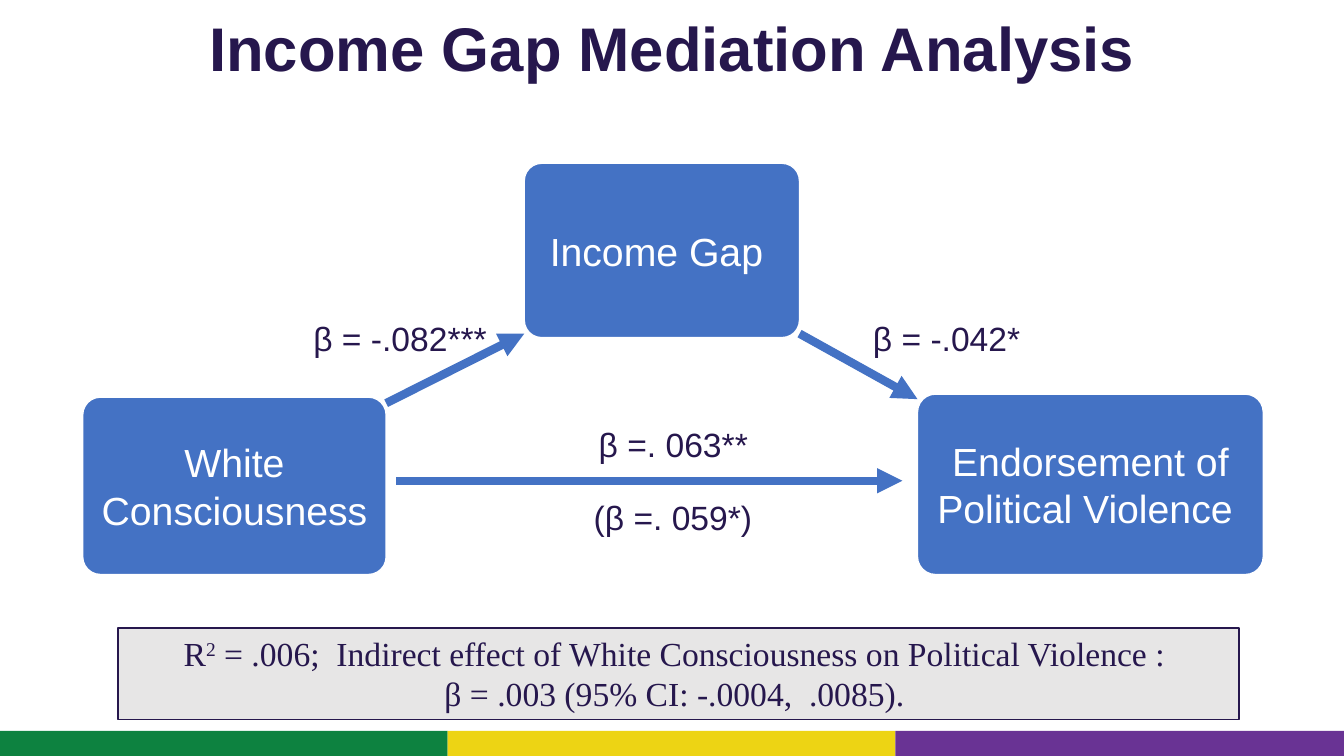
import pptx
import pptx.util
import pptx.dml.color
import pptx.enum.shapes
import pptx.enum.text
import pptx.oxml.ns
from lxml import etree

PX = 9144  # EMU per px, 100 px to the inch
W, H = 1333, 750
COLORS = {
    "ink": "26174D", "blue": "4472C4", "white": "FFFFFF", "grey": "E7E6E6",
    "green": "0D8240", "yellow": "EDD414", "purple": "693394",
}
SHAPE = pptx.enum.shapes.MSO_SHAPE
ALIGN = pptx.enum.text.PP_ALIGN
ANCHOR = pptx.enum.text.MSO_ANCHOR
FIT = pptx.enum.text.MSO_AUTO_SIZE
qn = pptx.oxml.ns.qn


def rgb(name):
    return pptx.dml.color.RGBColor.from_string(COLORS[name])


class Deck:
    """Slide style and the current slide."""

    fonts = {
        "title": {"name": "Arial", "size": 44, "bold": True, "color": "ink"},
        "box": {"name": "Arial", "size": 28, "color": "white"},
        "label": {"name": "Arial", "size": 24, "color": "ink"},
        "note": {"name": "Times New Roman", "size": 24, "color": "ink"},
    }

    def __init__(self):
        self.prs = pptx.Presentation()
        self.prs.slide_width, self.prs.slide_height = W * PX, H * PX
        self.s = self.prs.slides.add_slide(self.prs.slide_layouts[5])

    def emu(self, *px):
        return [pptx.util.Emu(v * PX) for v in px]

    def font(self, r, style):
        for key, value in self.fonts[style].items():
            if key == "color":
                r.font.color.rgb = rgb(value)
            else:
                setattr(r.font, key, pptx.util.Pt(value) if key == "size" else value)

    def text(self, tf, lines, style, align=ALIGN.CENTER, **frame):
        """Each line is a list of runs; a run starting with ^ is raised."""
        for key, value in {"word_wrap": True, **frame}.items():
            setattr(tf, key, value)
        for i, line in enumerate(lines):
            p = tf.add_paragraph() if i else tf.paragraphs[0]
            p.alignment = align
            for words in line:
                r = p.add_run()
                r.text = words.lstrip("^")
                self.font(r, style)
                if words.startswith("^"):
                    r._r.get_or_add_rPr().set("baseline", "30000")
        return tf

    def title(self, words, at):
        sp = self.s.shapes.title
        sp.left, sp.top, sp.width, sp.height = self.emu(*at)
        tf = self.text(sp.text_frame, [[words]], "title",
                       vertical_anchor=ANCHOR.MIDDLE, auto_size=FIT.NONE)
        tf.paragraphs[0].line_spacing = 0.9

    def shape(self, kind, at, fill, line=None):
        sp = self.s.shapes.add_shape(kind, *self.emu(*at))
        sp.shadow.inherit = False
        sp.fill.solid()
        sp.fill.fore_color.rgb = rgb(fill)
        if line:
            sp.line.color.rgb = rgb(line)
            sp.line.width = pptx.util.Pt(1)
        else:
            sp.line.fill.background()
        return sp

    def box(self, words, at):
        sp = self.shape(SHAPE.ROUNDED_RECTANGLE, at, "blue", "white")
        sp.adjustments[0] = 0.1
        pad = self.emu(12)[0]
        self.text(sp.text_frame, [[words]], "box", vertical_anchor=ANCHOR.MIDDLE,
                  margin_left=pad, margin_right=pad, margin_top=pad, margin_bottom=pad)

    def label(self, words, at):
        sp = self.s.shapes.add_textbox(*self.emu(*at))
        self.text(sp.text_frame, [[words]], "label", ALIGN.LEFT,
                  auto_size=FIT.SHAPE_TO_FIT_TEXT)

    def note(self, lines, at):
        sp = self.shape(SHAPE.RECTANGLE, at, "grey", "ink")
        self.text(sp.text_frame, lines, "note", vertical_anchor=ANCHOR.TOP,
                  auto_size=FIT.SHAPE_TO_FIT_TEXT)

    def arrow(self, *ends):
        c = self.s.shapes.add_connector(
            pptx.enum.shapes.MSO_CONNECTOR.STRAIGHT, *self.emu(*ends))
        c.line.color.rgb = rgb("blue")
        c.line.width = pptx.util.Pt(6)
        spPr = c._element.spPr
        etree.SubElement(spPr.find(qn("a:ln")), qn("a:tailEnd"), type="triangle")
        etree.SubElement(spPr, qn("a:effectLst"))


def main():
    d = Deck()

    # Footer stripe
    for i, color in enumerate(("green", "yellow", "purple")):
        left = i * W // 3
        d.shape(SHAPE.RECTANGLE, (left, 725, (i + 1) * W // 3 - left, 25), color)

    d.title("Income Gap Mediation Analysis", (103, 6, 1128, 91))

    # Variables
    d.box("White Consciousness", (82, 394, 301, 176))
    d.box("Income Gap ", (520, 162, 273, 173))
    d.box("Endorsement of Political Violence ", (910, 391, 343, 179))

    # Paths between them
    d.arrow(393, 477, 895, 477)
    d.arrow(383, 400, 520, 331)
    d.arrow(793, 331, 910, 396)

    # Coefficients
    d.label("β = -.082***", (301, 310, 204, 50))
    d.label("β = -.042*", (856, 310, 191, 50))
    d.label("β =. 063**", (584, 416, 183, 50))
    d.label("(β =. 059*)", (579, 488, 182, 50))

    # Model summary
    d.note([["R", "^2", " = .006;  Indirect effect of White Consciousness on Political Violence : "],
            ["β = .003 (95% CI: -.0004,  .0085). "]], (117, 623, 1112, 91))

    d.prs.save("out.pptx")


if __name__ == "__main__":
    main()
